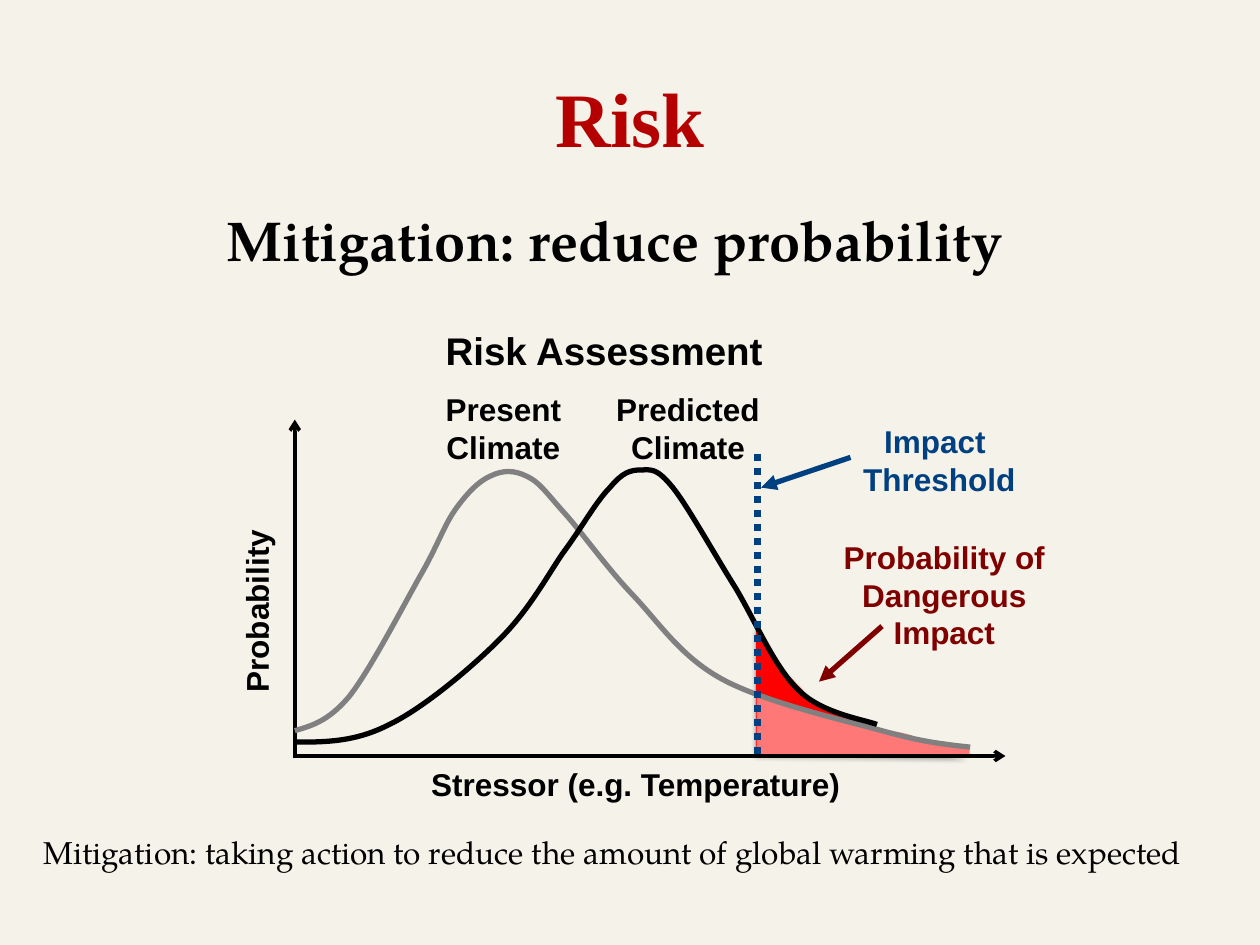
from lxml import etree
from pptx import Presentation, util as u
from pptx.dml.color import RGBColor
from pptx.enum import dml, shapes, text
from pptx.oxml.ns import qn

COLORS = {"background": "F5F2EA", "title": "B40000", "black": "000000", "gray": "808080",
          "blue": "004080", "maroon": "800000", "red": "FF0000", "pink": "FE7878"}
SERIF, SANS = "TeX Gyre Pagella", "Arial"

# Text: lines, (left, top, width, height), size, color, rotation, wraps
DIAGRAM_LABELS = [
    (["Risk Assessment"], (2.63, 2.55, 4.33, 0.47), 22, "black", 0, True),
    (["Probability of Dangerous Impact"], (6.33, 4.22, 2.33, 1), 18, "maroon", 0, True),
    (["Present Climate"], (3.08, 3.05, 1.83, 0.7), 18, "black", 0, True),
    (["Predicted Climate"], (4.5, 3.05, 1.92, 0.7), 18, "black", 0, True),
    (["Stressor (e.g. Temperature)"], (2.63, 6.02, 4.83, 0.4), 18, "black", 0, True),
    (["Probability"], (0.82, 4.65, 2.43, 0.4), 18, "black", 270, True),
    (["Impact ", "Threshold"], (6.75, 3.3, 1.41, 0.7), 18, "blue", 0, False),
]
# Statements: text, box, size, bold
STATEMENTS = [
    ("Mitigation: reduce probability", (1.7, 1.58, 6.43, 0.64), 32, True),
    ("Mitigation: taking action to reduce the amount of global warming that is expected",
     (0.25, 6.56, 9.33, 0.4), 18, False),
]
# Lines: start, end, color, width, arrowhead at the end
AXES = [((2.34, 6.02), (2.34, 3.33), "black", 2, "arrow"),
        ((2.34, 6), (7.98, 6), "black", 2, "arrow")]
THRESHOLD = ((6.01, 3.6), (6.01, 6.02), "blue", 4, None)
POINTERS = [((7, 4.97), (6.5, 5.41), "maroon", 3, "triangle"),
            ((6.75, 3.63), (6.04, 3.87), "blue", 3, "triangle")]
# Bezier curves: a start point, then two controls and an end point per segment
PRESENT = [(2.34, 5.8), (2.47, 5.76), (2.6, 5.73), (2.77, 5.53),
           (2.93, 5.33), (3.19, 4.83), (3.33, 4.58), (3.47, 4.34), (3.52, 4.18), (3.61, 4.05),
           (3.71, 3.91), (3.8, 3.82), (3.89, 3.78), (3.99, 3.73), (4.08, 3.73), (4.18, 3.78),
           (4.27, 3.82), (4.32, 3.89), (4.46, 4.05), (4.6, 4.2), (4.81, 4.5), (5.02, 4.72),
           (5.23, 4.94), (5.4, 5.21), (5.73, 5.39), (6.06, 5.57), (6.67, 5.71), (7, 5.8),
           (7.32, 5.89), (7.51, 5.91), (7.7, 5.93)]
PREDICTED = [(2.34, 5.89), (2.58, 5.89), (2.82, 5.89), (3.09, 5.75),
             (3.36, 5.62), (3.74, 5.3), (3.96, 5.08), (4.19, 4.85), (4.32, 4.61), (4.46, 4.4),
             (4.61, 4.2), (4.73, 3.98), (4.84, 3.87), (4.94, 3.75), (5, 3.73), (5.09, 3.73),
             (5.17, 3.73), (5.21, 3.71), (5.34, 3.87), (5.46, 4.02), (5.67, 4.4), (5.84, 4.67),
             (6, 4.94), (6.15, 5.3), (6.34, 5.48), (6.52, 5.66), (6.85, 5.71), (6.96, 5.75)]
PRESENT_TAIL = [(7.69, 5.92), (7.55, 5.9), (7.44, 5.88), (7.3, 5.87),
                (7.28, 5.87), (7.26, 5.85), (7.23, 5.84), (7.13, 5.81), (7.02, 5.8), (6.92, 5.77),
                (6.88, 5.76), (6.85, 5.75), (6.82, 5.74), (6.78, 5.74), (6.72, 5.73), (6.72, 5.73),
                (6.52, 5.67), (6.32, 5.6), (6.12, 5.55), (6.08, 5.53), (6.09, 5.53), (6.06, 5.52),
                (6.04, 5.52), (6.01, 5.51), (6.01, 5.51)]
# Straight edges of the areas beyond the threshold
TAIL_BASE = [(6.01, 5.99), (7.69, 5.99)]
DANGER_AREA = [(6, 5.98), (7.67, 6), (7.07, 5.84), (6.47, 5.58), (6.15, 5.25), (6, 4.97)]


def rgb(name):
    return RGBColor.from_string(COLORS[name])


def style_font(font, name, size, color, bold):
    font.name, font.size, font.bold = name, u.Pt(size), bold
    font.color.rgb = rgb(color)


def add_text(parent, lines, box, size, color, font, bold, align, rotation=0, wraps=False):
    shape = parent.add_textbox(*map(u.Inches, box))
    shape.rotation = rotation
    frame = shape.text_frame
    frame.word_wrap = wraps
    frame.auto_size = text.MSO_AUTO_SIZE.SHAPE_TO_FIT_TEXT
    frame.text = "\n".join(lines)
    for paragraph in frame.paragraphs:
        paragraph.alignment = align
        style_font(paragraph.font, font, size, color, bold)


def add_line(parent, start, end, color, width, arrowhead):
    line = parent.add_connector(shapes.MSO_CONNECTOR.STRAIGHT, *map(u.Inches, start + end))
    line.line.color.rgb, line.line.width = rgb(color), u.Pt(width)
    if arrowhead:
        etree.SubElement(line.line._get_or_add_ln(), qn("a:tailEnd"), type=arrowhead)
    etree.SubElement(line._element.spPr, qn("a:effectLst"))
    return line


def add_outline(parent, curve, edges=(), closed=False, fill=None, line=None, width=0.75):
    """Draw Bezier segments through curve, then straight edges."""
    points = [(u.Inches(x), u.Inches(y)) for x, y in [*curve, *edges]]
    builder = parent.build_freeform(*points[0])
    builder.add_line_segments(points[1:], close=closed)
    shape = builder.convert_to_shape()
    bend_segments(shape, len(curve) - 1)
    shape.shadow.inherit = False
    if fill:
        shape.fill.solid()
        shape.fill.fore_color.rgb = rgb(fill)
    else:
        shape.fill.background()
    if line:
        shape.line.color.rgb, shape.line.width = rgb(line), u.Pt(width)
    else:
        shape.line.fill.background()
    return shape


def bend_segments(shape, count):
    """Turn each three of the first count straight segments into one Bezier segment."""
    segments = list(shape._element.iter(qn("a:lnTo")))[:count]
    for first in range(0, count, 3):
        group = segments[first:first + 3]
        bezier = etree.Element(qn("a:cubicBezTo"))
        group[0].addprevious(bezier)
        for segment in group:
            bezier.append(segment[0])
            segment.getparent().remove(segment)


def add_shadow(shape):
    effects = shape._element.spPr.find(qn("a:effectLst"))
    shadow = etree.SubElement(effects, qn("a:outerShdw"), blurRad=str(u.Pt(3.1)),
                              dist=str(u.Pt(1.6)), dir="5400000", rotWithShape="0")
    color = etree.SubElement(shadow, qn("a:srgbClr"), val=COLORS["black"])
    etree.SubElement(color, qn("a:alpha"), val="38000")


def main():
    presentation = Presentation()
    presentation.slide_width, presentation.slide_height = u.Inches(10), u.Inches(7.5)
    slide = presentation.slides.add_slide(presentation.slide_layouts[5])
    slide.background.fill.solid()
    slide.background.fill.fore_color.rgb = rgb("background")

    # Title
    title = slide.shapes.title
    title.left, title.top, title.width, title.height = map(u.Inches, (0.5, 0.3, 9, 1.25))
    title.text_frame.text = "Risk"
    title.text_frame.vertical_anchor = text.MSO_ANCHOR.MIDDLE
    paragraph = title.text_frame.paragraphs[0]
    paragraph.alignment = text.PP_ALIGN.CENTER
    style_font(paragraph.font, "Times New Roman", 44, "title", True)

    # Risk diagram: areas, labels, axes, curves, threshold and pointers
    add_shadow(add_outline(slide.shapes, DANGER_AREA[:1], DANGER_AREA[1:], fill="red"))
    diagram = slide.shapes.add_group_shape().shapes
    add_outline(diagram, PRESENT_TAIL, TAIL_BASE, closed=True, fill="pink", line="pink")
    for lines, box, size, color, rotation, wraps in DIAGRAM_LABELS:
        add_text(diagram, lines, box, size, color, SANS, True, text.PP_ALIGN.CENTER,
                 rotation, wraps)
    for axis in AXES:
        add_line(diagram, *axis)
    for curve, color in ((PRESENT, "gray"), (PREDICTED, "black")):
        add_outline(diagram, curve, line=color, width=3)
    add_line(diagram, *THRESHOLD).line.dash_style = dml.MSO_LINE.ROUND_DOT
    for pointer in POINTERS:
        add_line(diagram, *pointer)

    # Mitigation statements
    for statement, box, size, bold in STATEMENTS:
        add_text(slide.shapes, [statement], box, size, "black", SERIF, bold, text.PP_ALIGN.LEFT)

    presentation.save("out.pptx")


if __name__ == "__main__":
    main()
